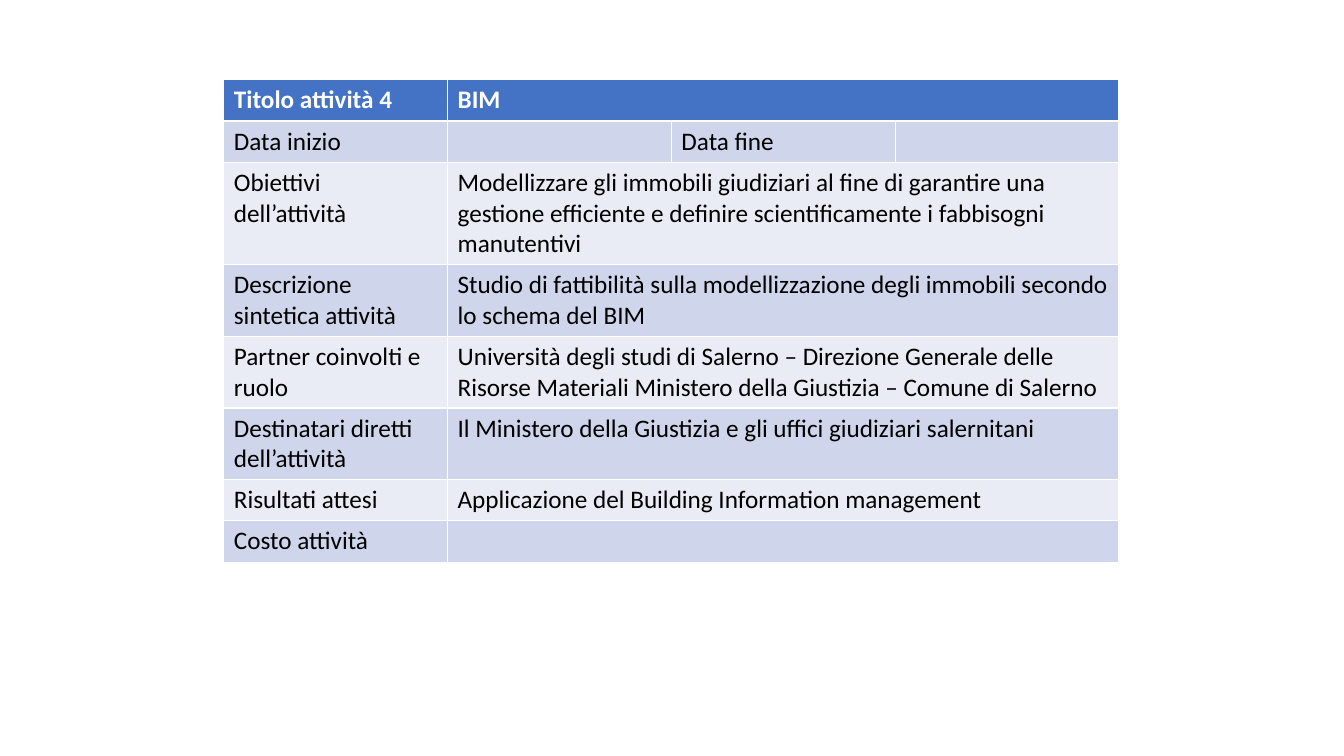
from dataclasses import dataclass

from pptx import Presentation
from pptx.dml.color import RGBColor as Rgb
from pptx.table import Table, _Cell as Cell
from pptx.util import Cm, Pt

COLORS = {
    "header": "4472C4",
    "band_dark": "CFD5EA",
    "band_light": "E9EBF5",
    "header_text": "FFFFFF",
    "body_text": "000000",
}
COLUMN_COUNT = 4
COLUMN_WIDTH = Cm(5.64)
ROW_HEIGHT = Cm(1.04)


@dataclass(frozen=True)
class ActivityRow:
    texts: tuple[str, ...]
    height: int = ROW_HEIGHT


ROWS = [
    ActivityRow(("Titolo attività 4", "BIM")),
    ActivityRow(("Data inizio", "", "Data fine", "")),
    ActivityRow(
        (
            "Obiettivi dell’attività",
            "Modellizzare gli immobili giudiziari al fine di garantire una gestione "
            "efficiente e definire scientificamente i fabbisogni manutentivi",
        ),
        Cm(2.13),
    ),
    ActivityRow((
        "Descrizione sintetica attività",
        "Studio di fattibilità sulla modellizzazione degli immobili secondo "
        "lo schema del BIM",
    )),
    ActivityRow((
        "Partner coinvolti e ruolo",
        "Università degli studi di Salerno – Direzione Generale delle Risorse "
        "Materiali Ministero della Giustizia – Comune di Salerno",
    )),
    ActivityRow((
        "Destinatari diretti dell’attività",
        "Il Ministero della Giustizia e gli uffici giudiziari salernitani",
    )),
    ActivityRow(("Risultati attesi", "Applicazione del Building Information management")),
    ActivityRow(("Costo attività", "")),
]


def fill_cell(cell: Cell, text: str, fill: str, is_header: bool) -> None:
    cell.fill.solid()
    cell.fill.fore_color.rgb = Rgb.from_string(COLORS[fill])
    cell.text = text
    font = cell.text_frame.paragraphs[0].font
    font.name = "Calibri"
    font.size = Pt(18)
    font.bold = is_header
    text_color = "header_text" if is_header else "body_text"
    font.color.rgb = Rgb.from_string(COLORS[text_color])


def fill_row(table: Table, index: int, row: ActivityRow) -> None:
    table.rows[index].height = row.height
    is_header = index == 0
    band = "band_dark" if index % 2 else "band_light"
    fill = "header" if is_header else band
    last_column = len(row.texts) - 1
    if last_column < COLUMN_COUNT - 1:
        table.cell(index, last_column).merge(table.cell(index, COLUMN_COUNT - 1))
    for column, text in enumerate(row.texts):
        fill_cell(table.cell(index, column), text, fill, is_header)


def main() -> None:
    deck = Presentation()
    deck.slide_width = Cm(33.87)
    deck.slide_height = Cm(19.05)
    page = deck.slides.add_slide(deck.slide_layouts[6])
    table = page.shapes.add_table(
        len(ROWS), COLUMN_COUNT, Cm(5.64), Cm(2.01),
        COLUMN_WIDTH * COLUMN_COUNT, sum(row.height for row in ROWS),
    ).table
    for column in table.columns:
        column.width = COLUMN_WIDTH
    for index, row in enumerate(ROWS):
        fill_row(table, index, row)
    deck.save("out.pptx")


if __name__ == "__main__":
    main()
